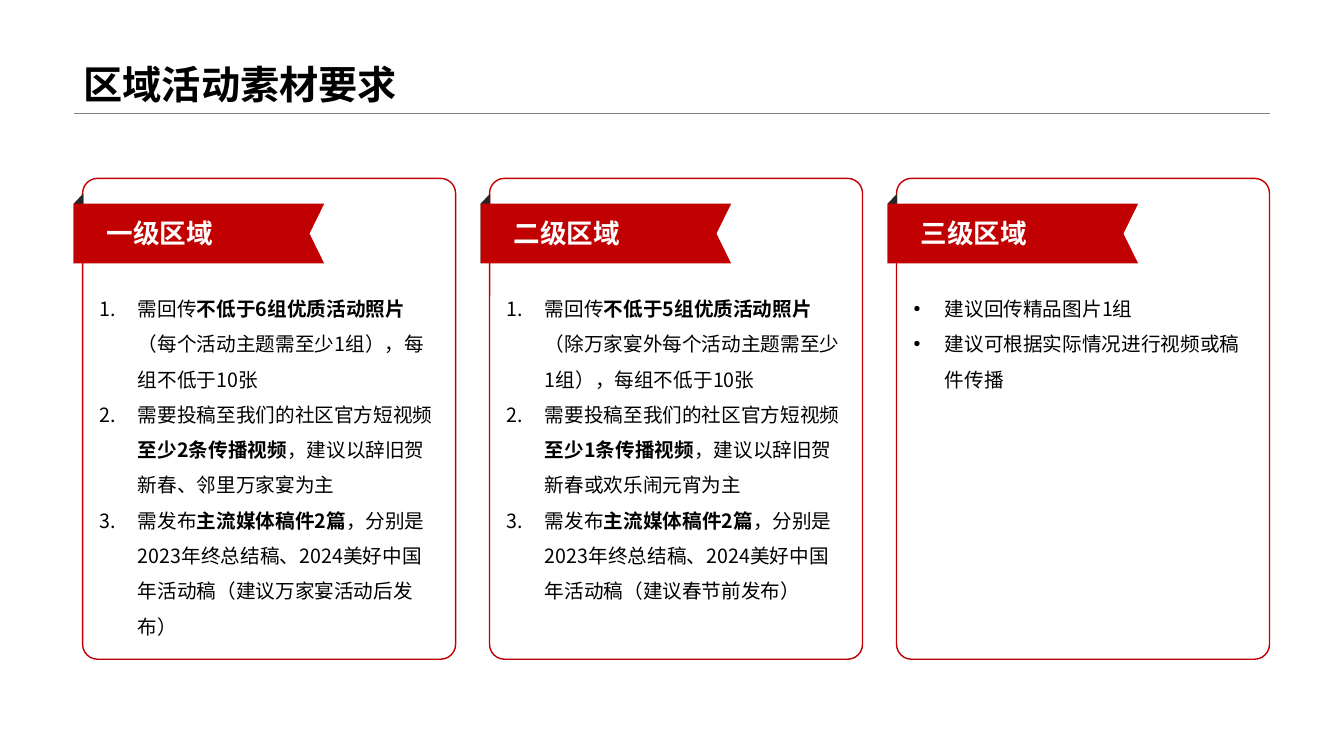
from dataclasses import dataclass

from lxml.etree import SubElement
from pptx import Presentation
from pptx.dml.color import RGBColor
from pptx.enum.shapes import MSO_CONNECTOR, MSO_SHAPE
from pptx.enum.text import MSO_ANCHOR, MSO_AUTO_SIZE, PP_ALIGN
from pptx.oxml.ns import qn
from pptx.util import Inches, Pt


@dataclass(frozen=True)
class Theme:
    red: str = "C00001"
    fold: str = "262626"
    rule: str = "808080"
    ink: str = "000000"
    paper: str = "FFFFFF"
    title_size: float = 28
    label_size: float = 19
    body_size: float = 14
    latin: str = "Arial"
    cjk: str = "Noto Sans CJK SC"


THEME = Theme()

# Horizontal and vertical shares of the slide, in percent
LEFT, WIDTH, RULE_Y = 5.48, 89.02, 14.93
PITCH = 30.28

# Within a list item, every second piece is bold
REGIONS = [
    ("一级区域", "1.", [
        ("需回传", "不低于6组优质活动照片", "（每个活动主题需至少1组），每组不低于10张"),
        ("需要投稿至我们的社区官方短视频", "至少2条传播视频",
         "，建议以辞旧贺新春、邻里万家宴为主"),
        ("需发布", "主流媒体稿件2篇",
         "，分别是2023年终总结稿、2024美好中国年活动稿（建议万家宴活动后发布）"),
    ]),
    ("二级区域", "1.", [
        ("需回传", "不低于5组优质活动照片",
         "（除万家宴外每个活动主题需至少1组），每组不低于10张"),
        ("需要投稿至我们的社区官方短视频", "至少1条传播视频",
         "，建议以辞旧贺新春或欢乐闹元宵为主"),
        ("需发布", "主流媒体稿件2篇",
         "，分别是2023年终总结稿、2024美好中国年活动稿（建议春节前发布）"),
    ]),
    ("三级区域", "•", [
        ("建议回传精品图片1组",),
        ("建议可根据实际情况进行视频或稿件传播",),
    ]),
]


def write(paragraph, text, *, size, color, font=THEME.cjk, bold=False):
    """Add one formatted run to a paragraph."""
    run = paragraph.add_run()
    run.text = text
    run.font.size = Pt(size)
    run.font.bold = bold
    run.font.name = font
    run.font.color.rgb = RGBColor.from_string(color)
    SubElement(run.font._element, qn("a:ea"), typeface=THEME.cjk)


def mark(paragraph, marker, indent):
    """Give a paragraph a hanging number or bullet."""
    properties = paragraph._p.get_or_add_pPr()
    properties.set("marL", str(Inches(indent)))
    properties.set("indent", str(-Inches(indent)))
    SubElement(properties, qn("a:buFont"), typeface=THEME.latin)
    if marker == "1.":
        SubElement(properties, qn("a:buAutoNum"), type="arabicPeriod")
    else:
        SubElement(properties, qn("a:buChar"), char=marker)


class Deck:
    def __init__(self, theme):
        self.theme = theme
        self.presentation = Presentation()
        self.presentation.slide_width = Inches(13.333)
        self.presentation.slide_height = Inches(7.5)
        self.slide = self.presentation.slides.add_slide(
            self.presentation.slide_layouts[5])

    def x(self, share):
        return round(self.presentation.slide_width * share / 100)

    def y(self, share):
        return round(self.presentation.slide_height * share / 100)

    def place(self, left, top, width, height):
        return self.x(left), self.y(top), self.x(width), self.y(height)

    def paint(self, shape, fill, line=None):
        shape.shadow.inherit = False
        shape.fill.solid()
        shape.fill.fore_color.rgb = RGBColor.from_string(fill)
        if line:
            shape.line.color.rgb = RGBColor.from_string(line)
            shape.line.width = Pt(1)
        else:
            shape.line.fill.background()

    def title(self, text):
        heading = self.slide.shapes.title
        heading.left, heading.top, heading.width, heading.height = self.place(
            LEFT, 0, WIDTH, RULE_Y)
        frame = heading.text_frame
        frame.auto_size = MSO_AUTO_SIZE.NONE
        frame.vertical_anchor = MSO_ANCHOR.BOTTOM
        paragraph = frame.paragraphs[0]
        paragraph.alignment = PP_ALIGN.LEFT
        paragraph.line_spacing = 0.9
        write(paragraph, text, size=self.theme.title_size,
              color=self.theme.ink, font=self.theme.latin, bold=True)

    def rule(self, left, top, width):
        rule = self.slide.shapes.add_connector(
            MSO_CONNECTOR.STRAIGHT, self.x(left), self.y(top),
            self.x(left + width), self.y(top))
        rule.line.color.rgb = RGBColor.from_string(self.theme.rule)
        rule.line.width = Pt(0.25)
        SubElement(rule._element.spPr, qn("a:effectLst"))

    def card(self, left, top, width, height):
        card = self.slide.shapes.add_shape(
            MSO_SHAPE.ROUNDED_RECTANGLE, *self.place(left, top, width, height))
        card.adjustments[0] = 0.04
        self.paint(card, self.theme.paper, self.theme.red)

    def outline(self, points, fill):
        start, *others = [(self.x(across), self.y(down)) for across, down in points]
        builder = self.slide.shapes.build_freeform(*start)
        builder.add_line_segments(others, close=True)
        self.paint(builder.convert_to_shape(), fill)

    def text_frame(self, left, top, width, height, anchor):
        frame = self.slide.shapes.add_textbox(
            *self.place(left, top, width, height)).text_frame
        frame.word_wrap = True
        frame.vertical_anchor = anchor
        return frame

    def label(self, text, left, top, width, height):
        frame = self.text_frame(left, top, width, height, MSO_ANCHOR.MIDDLE)
        write(frame.paragraphs[0], text, size=self.theme.label_size,
              color=self.theme.paper, font=self.theme.latin, bold=True)

    def items(self, marker, items, left, top, width, height):
        frame = self.text_frame(left, top, width, height, MSO_ANCHOR.TOP)
        for number, pieces in enumerate(items):
            paragraph = frame.add_paragraph() if number else frame.paragraphs[0]
            mark(paragraph, marker, 0.38 if marker == "1." else 0.31)
            paragraph.line_spacing = 1.5
            for order, piece in enumerate(pieces):
                write(paragraph, piece, size=self.theme.body_size,
                      color=self.theme.ink, bold=order % 2 == 1)

    def region(self, left, name, marker, items):
        self.card(left + 0.67, 23.6, 27.75, 63.6)
        # Folded corner, then the ribbon with its notch
        fold = left + 0.72
        self.outline([(fold, 25.6), (left, 26.95), (left, 34.85), (fold, 33.6)],
                     self.theme.fold)
        tip = left + 18.64
        self.outline([(tip, 26.95), (left, 26.95), (left, 34.85), (tip, 34.85),
                      (left + 17.55, 30.9)], self.theme.red)
        self.label(name, left + 1.72, 27.2, 14.78, 7.2)
        self.items(marker, items, left + 1.2, 37.07, 26.7, 44.67)


def main():
    deck = Deck(THEME)
    # Heading
    deck.title("区域活动素材要求")
    deck.rule(LEFT, RULE_Y, WIDTH)
    # One card per region level
    for column, (name, marker, items) in enumerate(REGIONS):
        deck.region(LEFT + column * PITCH, name, marker, items)
    deck.presentation.save("out.pptx")


if __name__ == "__main__":
    main()
